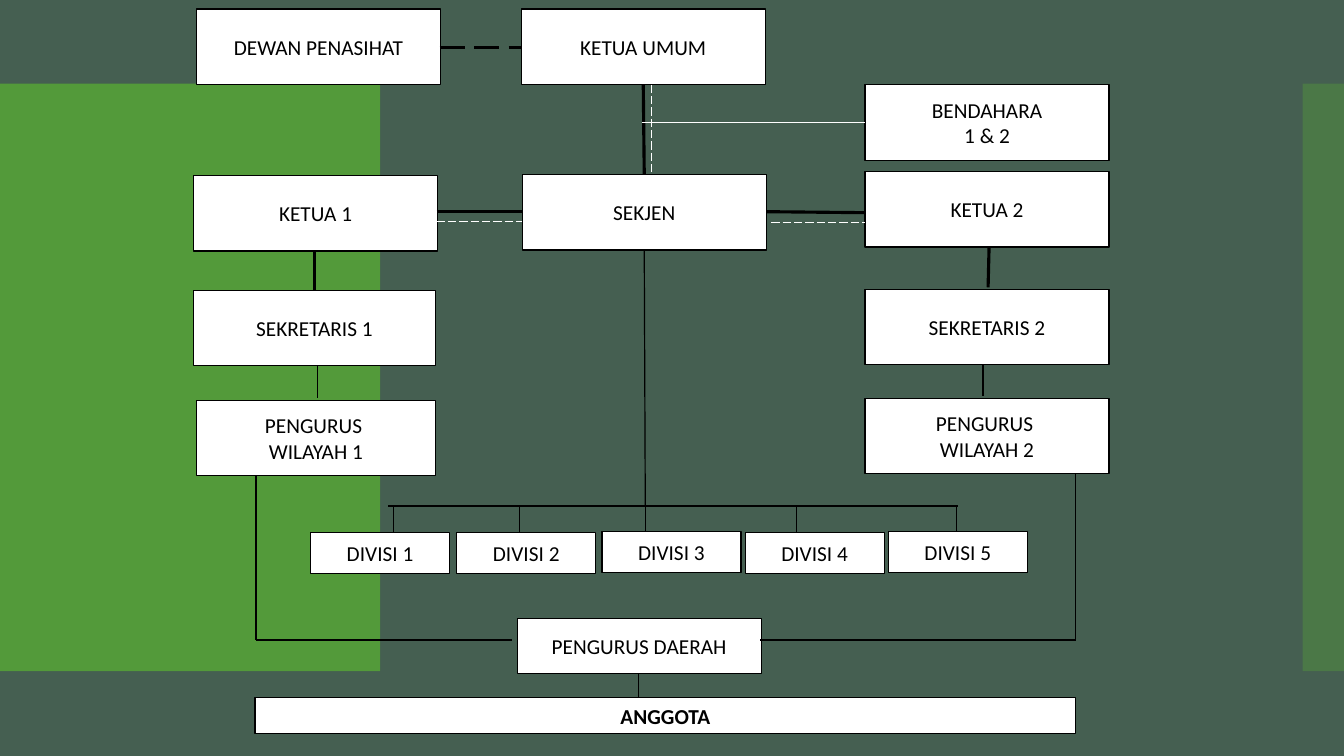
from dataclasses import dataclass

from lxml.etree import SubElement
from pptx import Presentation
from pptx.dml.color import RGBColor
from pptx.enum.dml import MSO_LINE_DASH_STYLE as Dash
from pptx.enum.shapes import MSO_CONNECTOR as Connector, MSO_SHAPE as Shape
from pptx.enum.text import MSO_ANCHOR as Anchor, PP_ALIGN as Align
from pptx.oxml.ns import qn
from pptx.slide import Slide
from pptx.util import Inches, Pt

BACKGROUND = RGBColor(0x45, 0x5F, 0x51)
GREEN = RGBColor(0x54, 0x9E, 0x39)
WHITE = RGBColor(0xFF, 0xFF, 0xFF)
BLACK = RGBColor(0x00, 0x00, 0x00)
THIN, THICK, HAIRLINE = 0.85, 2.25, 0.75
BOX_WIDTH, BOX_HEIGHT = 2.42, 0.75
BUS_TOP = 5.02
REGION_TOP = 6.35


@dataclass(frozen=True)
class Panel:
    left: float
    width: float
    opacity: int


@dataclass(frozen=True)
class Box:
    text: str
    left: float
    top: float
    width: float = BOX_WIDTH
    height: float = BOX_HEIGHT
    bold: bool = False


@dataclass(frozen=True)
class Link:
    start_x: float
    start_y: float
    end_x: float
    end_y: float
    weight: float = THIN
    color: RGBColor = BLACK
    dashed: bool = False


PANELS = [Panel(0, 3.77, 95), Panel(12.92, 0.42, 40)]

OFFICERS = [
    Box("DEWAN PENASIHAT", 1.95, 0.09),
    Box("KETUA UMUM", 5.17, 0.09),
    Box("BENDAHARA\n1 & 2", 8.58, 0.84),
    Box("KETUA 1", 1.92, 1.74),
    Box("SEKJEN", 5.18, 1.73),
    Box("KETUA 2", 8.58, 1.7),
    Box("SEKRETARIS 1", 1.92, 2.88, 2.4),
    Box("SEKRETARIS 2", 8.58, 2.87),
    Box("PENGURUS \nWILAYAH 1", 1.95, 3.97, 2.37),
    Box("PENGURUS \nWILAYAH 2", 8.58, 3.95),
    Box("PENGURUS DAERAH", 5.13, 6.14, height=0.54),
    Box("ANGGOTA", 2.53, 6.92, 8.14, 0.36, bold=True),
]

DIVISION_PLACES = [(3.08, 5.28), (4.53, 5.28), (5.97, 5.27), (7.39, 5.28), (8.81, 5.27)]
DIVISIONS = [
    Box(f"DIVISI {number}", left, top, 1.38, 0.41)
    for number, (left, top) in enumerate(DIVISION_PLACES, start=1)
]
DIVISION_STEMS = [Link(x, BUS_TOP, x, 5.28) for x in (3.9, 5.15, 6.4, 7.9, 9.49)]

COMMAND_LINKS = [
    Link(4.36, 0.47, 5.17, 0.47, THICK, dashed=True),
    Link(6.38, 0.84, 6.39, 1.73, THICK),
    Link(7.6, 2.1, 8.58, 2.11, THICK),
    Link(4.33, 2.1, 5.18, 2.1, THICK),
    Link(3.12, 2.49, 3.12, 2.88, THICK),
    Link(9.81, 2.45, 9.8, 2.85, THICK),
    Link(3.15, 3.63, 3.15, 3.95),
    Link(9.75, 3.62, 9.75, 3.93),
    Link(6.39, 2.48, 6.4, BUS_TOP),
    Link(3.85, BUS_TOP, 9.5, BUS_TOP),
]

REGION_LINKS = [
    Link(2.54, 4.72, 2.54, REGION_TOP),
    Link(2.54, REGION_TOP, 5.08, REGION_TOP),
    Link(7.54, REGION_TOP, 10.67, REGION_TOP),
    Link(10.67, 4.7, 10.67, REGION_TOP),
    Link(6.33, 6.68, 6.33, 6.92),
]

COORDINATION_LINKS = [
    Link(6.37, 1.22, 8.58, 1.22, HAIRLINE, WHITE),
    Link(6.46, 0.84, 6.46, 1.74, HAIRLINE, WHITE, True),
    Link(4.33, 2.2, 5.18, 2.2, HAIRLINE, WHITE, True),
    Link(7.65, 2.21, 8.58, 2.21, HAIRLINE, WHITE, True),
]


def draw_panel(slide: Slide, panel: Panel) -> None:
    shape = slide.shapes.add_shape(
        Shape.RECTANGLE, Inches(panel.left), Inches(0.83), Inches(panel.width), Inches(5.83)
    )
    shape.shadow.inherit = False
    shape.fill.solid()
    shape.fill.fore_color.rgb = GREEN
    shape.line.fill.background()
    color = shape.fill._xPr.find(f"{qn('a:solidFill')}/{qn('a:srgbClr')}")
    SubElement(color, qn("a:alpha"), val=str(panel.opacity * 1000))


def draw_box(slide: Slide, box: Box) -> None:
    shape = slide.shapes.add_shape(
        Shape.RECTANGLE, Inches(box.left), Inches(box.top), Inches(box.width), Inches(box.height)
    )
    shape.shadow.inherit = False
    shape.fill.solid()
    shape.fill.fore_color.rgb = WHITE
    shape.line.color.rgb = BLACK
    shape.line.width = Pt(THIN)
    text_frame = shape.text_frame
    text_frame.word_wrap = True
    text_frame.vertical_anchor = Anchor.MIDDLE
    text_frame.text = box.text
    for paragraph in text_frame.paragraphs:
        paragraph.alignment = Align.CENTER
        for run in paragraph.runs:
            run.font.name = "Calibri"
            run.font.size = Pt(15.2)
            run.font.bold = box.bold
            run.font.color.rgb = BLACK


def draw_link(slide: Slide, link: Link) -> None:
    connector = slide.shapes.add_connector(
        Connector.STRAIGHT,
        Inches(link.start_x),
        Inches(link.start_y),
        Inches(link.end_x),
        Inches(link.end_y),
    )
    connector.line.color.rgb = link.color
    connector.line.width = Pt(link.weight)
    if link.dashed:
        connector.line.dash_style = Dash.LONG_DASH
    SubElement(connector._element.spPr, qn("a:effectLst"))


def main() -> None:
    presentation = Presentation()
    presentation.slide_width = Inches(13.33)
    presentation.slide_height = Inches(7.5)
    slide = presentation.slides.add_slide(presentation.slide_layouts[6])
    slide.background.fill.solid()
    slide.background.fill.fore_color.rgb = BACKGROUND
    for panel in PANELS:
        draw_panel(slide, panel)
    for box in OFFICERS + DIVISIONS:
        draw_box(slide, box)
    for link in COMMAND_LINKS + DIVISION_STEMS + REGION_LINKS + COORDINATION_LINKS:
        draw_link(slide, link)
    presentation.save("out.pptx")


if __name__ == "__main__":
    main()
